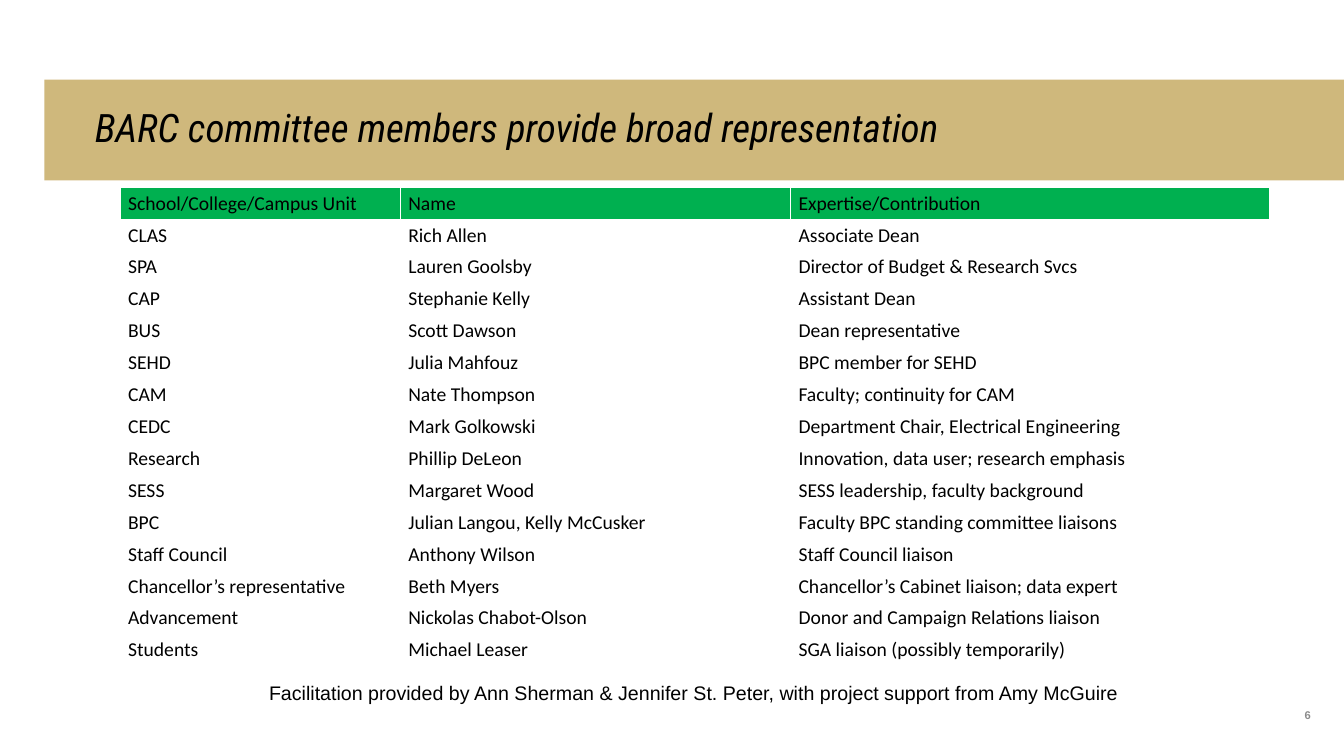
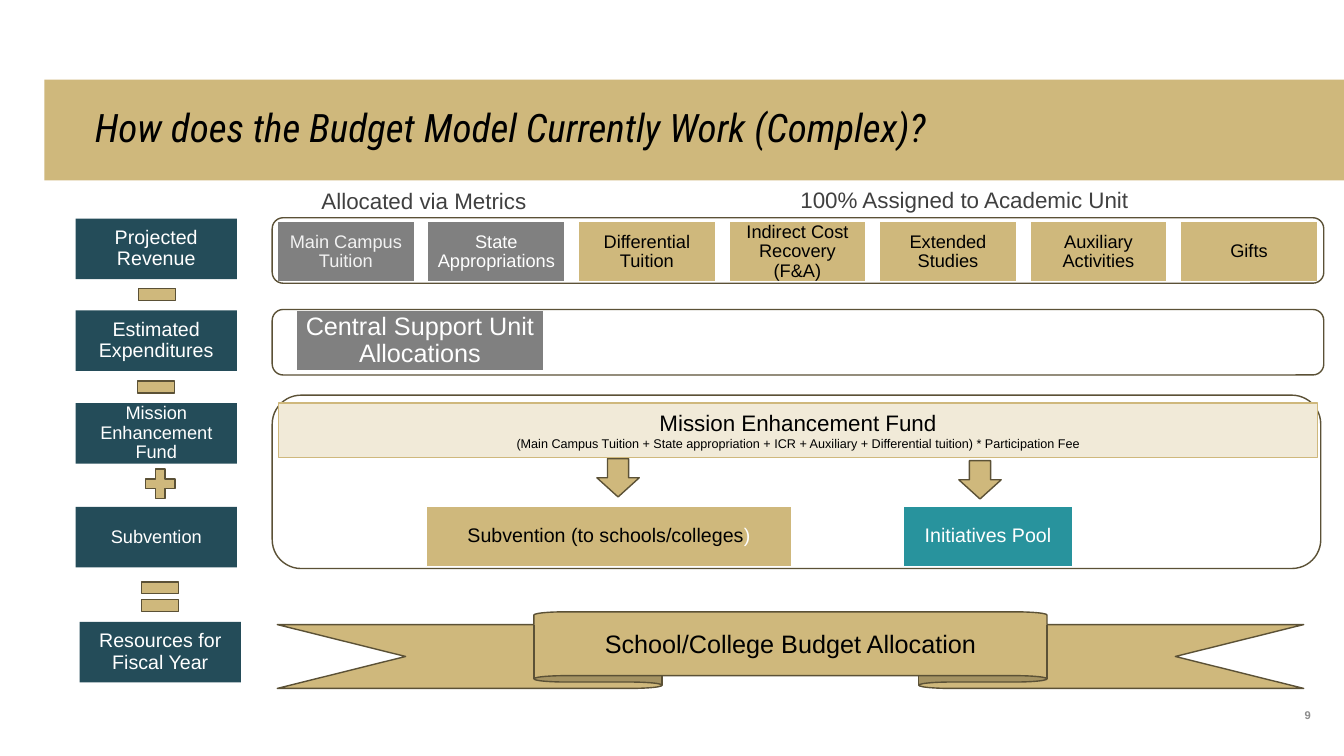
import pptx
import pptx.util
import pptx.dml.color
import pptx.enum.shapes
import pptx.enum.text
import lxml.etree
from pptx.util import Inches, Pt

SHAPE = pptx.enum.shapes.MSO_SHAPE
ALIGN = pptx.enum.text.PP_ALIGN
ANCHOR = pptx.enum.text.MSO_ANCHOR

# Shared colours and fonts
GOLD, CREAM, BROWN = "CFB87C", "F1EAD8", "5B5136"
GRAY, NAVY, TEAL, GREEN = "808080", "244C59", "28939D", "00B050"
BLACK, WHITE, OFF_WHITE, DARK, PAGE = "000000", "FFFFFF", "F2F2F2", "404040", "8C8C8C"
TITLE_FONT, BODY_FONT, TABLE_FONT = "Roboto Condensed", "Arial", "Calibri"

# Committee slide content
MEMBERS = [
    ("School/College/Campus Unit", "Name", "Expertise/Contribution"),
    ("CLAS", "Rich Allen", "Associate Dean"),
    ("SPA", "Lauren Goolsby", "Director of Budget & Research Svcs"),
    ("CAP", "Stephanie Kelly", "Assistant Dean"),
    ("BUS", "Scott Dawson", "Dean representative"),
    ("SEHD", "Julia Mahfouz", "BPC member for SEHD"),
    ("CAM", "Nate Thompson", "Faculty; continuity for CAM"),
    ("CEDC", "Mark Golkowski", "Department Chair, Electrical Engineering"),
    ("Research", "Phillip DeLeon", "Innovation, data user; research emphasis"),
    ("SESS", "Margaret Wood", "SESS leadership, faculty background"),
    ("BPC", "Julian Langou, Kelly McCusker", "Faculty BPC standing committee liaisons"),
    ("Staff Council", "Anthony Wilson", "Staff Council liaison"),
    ("Chancellor’s representative", "Beth Myers", "Chancellor’s Cabinet liaison; data expert"),
    ("Advancement", "Nickolas Chabot-Olson", "Donor and Campaign Relations liaison"),
    ("Students", "Michael Leaser", "SGA liaison (possibly temporarily)"),
]
COLUMN_WIDTHS = (2.78, 3.87, 4.75)
TABLE_HEIGHT = 4.75
FACILITATION = ("Facilitation provided by Ann Sherman & Jennifer St. Peter, "
                "with project support from Amy McGuire")

# Budget model slide content
HEADINGS = [("Allocated via Metrics", 3.09, 1.81, 2.25),
            ("100% Assigned to Academic Unit", 7.84, 1.8, 3.5)]
STEPS = [  # text, left, top, size
    ("Projected Revenue", 0.75, 2.17, 14),
    ("Estimated Expenditures", 0.75, 3.08, 14),
    ("Mission Enhancement Fund", 0.75, 4, 13),
    ("Subvention", 0.75, 5.03, 13),
    ("Resources for Fiscal Year", 0.79, 6.17, 14),
]
OPERATORS = [  # shape, left, top, side
    (SHAPE.MATH_MINUS, 1.31, 2.67, 0.5),
    (SHAPE.MATH_MINUS, 1.3, 3.59, 0.5),
    (SHAPE.MATH_PLUS, 1.39, 4.6, 0.4),
    (SHAPE.MATH_EQUAL, 1.34, 5.67, 0.5),
]
REVENUES = [  # text, fill, text colour
    ("Main Campus Tuition", GRAY, OFF_WHITE),
    ("State Appropriations", GRAY, WHITE),
    ("Differential Tuition", GOLD, BLACK),
    ("Indirect Cost Recovery (F&A)", GOLD, BLACK),
    ("Extended Studies", GOLD, BLACK),
    ("Auxiliary Activities", GOLD, BLACK),
    ("Gifts", GOLD, BLACK),
]
REVENUE_LEFT, REVENUE_STEP, REVENUE_WIDTH = 2.75, 1.493, 1.36
BOX_HEIGHT = 0.6
FRAMES = [(2.7, 2.16, 10.43, 0.65), (2.7, 3.07, 10.43, 0.65), (2.7, 3.92, 10.4, 1.72)]
FUND_LINES = [
    ("Mission Enhancement Fund", 16),
    ("(Main Campus Tuition + State appropriation + ICR + Auxiliary + "
     "Differential tuition) * Participation Fee", 9),
]
DOWN_ARROWS = [(5.92, 4.55), (9.51, 4.57)]


def rgb(value):
    return pptx.dml.color.RGBColor.from_string(value)


def set_font(p, size, color, name=BODY_FONT, bold=False, italic=False):
    font = p.font
    font.size, font.name, font.bold, font.italic = Pt(size), name, bold, italic
    font.color.rgb = rgb(color)


def set_margins(target, left, top, right, bottom):
    target.margin_left, target.margin_top = Inches(left), Inches(top)
    target.margin_right, target.margin_bottom = Inches(right), Inches(bottom)


def add_text(s, text, at, size, color, bold=False, align=ALIGN.LEFT, wrap=True):
    tf = s.shapes.add_textbox(*map(Inches, at)).text_frame
    tf.word_wrap = wrap
    p = tf.paragraphs[0]
    p.text, p.alignment = text, align
    set_font(p, size, color, bold=bold)
    return tf


def add_box(s, shape, at, fill=None, line=None):
    sp = s.shapes.add_shape(shape, *map(Inches, at))
    sp.shadow.inherit = False
    if fill:
        sp.fill.solid()
        sp.fill.fore_color.rgb = rgb(fill)
    else:
        sp.fill.background()
    if line:
        sp.line.color.rgb = rgb(line)
        sp.line.width = Pt(1)
    else:
        sp.line.fill.background()
    return sp


def write_lines(sp, lines, color, margin=None, spacing=None):
    """Centre (text, size) lines in a shape."""
    tf = sp.text_frame
    tf.word_wrap = True
    tf.vertical_anchor = ANCHOR.MIDDLE
    if margin is not None:
        set_margins(tf, *[margin] * 4)
    for i, (text, size) in enumerate(lines):
        p = tf.add_paragraph() if i else tf.paragraphs[0]
        p.text, p.alignment = text, ALIGN.CENTER
        if spacing:
            p.line_spacing = spacing
        set_font(p, size, color)
    return tf


def add_label(s, text, at, size, fill, color, line=WHITE, margin=0.07):
    sp = add_box(s, SHAPE.RECTANGLE, at, fill, line)
    return write_lines(sp, [(text, size)], color, margin, 0.9)


def add_slide(prs, title, number):
    """Title-only slide with the gold title band and page number."""
    s = prs.slides.add_slide(prs.slide_layouts[5])
    sp = s.shapes.title
    sp.left, sp.top, sp.width, sp.height = map(Inches, (0.44, 0.79, 12.89, 1))
    sp.fill.solid()
    sp.fill.fore_color.rgb = rgb(GOLD)
    tf = sp.text_frame
    tf.text = title
    tf.auto_size = pptx.enum.text.MSO_AUTO_SIZE.NONE
    tf.vertical_anchor = ANCHOR.MIDDLE
    set_margins(tf, 0.5, 0.05, 1, 0.05)
    p = tf.paragraphs[0]
    p.alignment, p.line_spacing = ALIGN.LEFT, 0.9
    set_font(p, 28, BLACK, TITLE_FONT, italic=True)
    tf = add_text(s, number, (12.15, 6.66, 0.85, 0.5), 8, PAGE, True, ALIGN.RIGHT)
    tf.vertical_anchor = ANCHOR.BOTTOM
    set_margins(tf, 0, 0, 0, 0)
    return s


def set_borders(cell, color, width):
    ns = "http://schemas.openxmlformats.org/drawingml/2006/main"
    tc_pr = cell._tc.get_or_add_tcPr()
    for i, side in enumerate(("lnL", "lnR", "lnT", "lnB")):
        ln = lxml.etree.Element(f"{{{ns}}}{side}", w=str(Pt(width)))
        fill = lxml.etree.SubElement(ln, f"{{{ns}}}solidFill")
        lxml.etree.SubElement(fill, f"{{{ns}}}srgbClr", val=color)
        tc_pr.insert(i, ln)


def build_committee(prs):
    s = add_slide(prs, "BARC committee members provide broad representation", "6")
    add_text(s, FACILITATION, (2.57, 6.71, 8.64, 0.34), 14, BLACK, wrap=False)

    # Members table
    at = (1.19, 1.86, sum(COLUMN_WIDTHS), TABLE_HEIGHT)
    table = s.shapes.add_table(len(MEMBERS), len(COLUMN_WIDTHS), *map(Inches, at)).table
    table.horz_banding = False
    for column, width in zip(table.columns, COLUMN_WIDTHS):
        column.width = Inches(width)
    for r, row in enumerate(MEMBERS):
        for c, text in enumerate(row):
            cell = table.cell(r, c)
            cell.text = text
            set_margins(cell, 0.08, 0.04, 0.08, 0.04)
            if r == 0:
                cell.fill.solid()
                cell.fill.fore_color.rgb = rgb(GREEN)
            else:
                cell.fill.background()
            set_borders(cell, WHITE, 0.75)
            set_font(cell.text_frame.paragraphs[0], 14, BLACK, TABLE_FONT)


def build_budget_model(prs):
    s = add_slide(prs, "How does the Budget Model Currently Work (Complex)?", "9")
    for text, left, top, width in HEADINGS:
        add_text(s, text, (left, top, width, 0.37), 16, DARK)

    # Left column of steps and operators
    for text, left, top, size in STEPS:
        add_label(s, text, (left, top, 1.6, BOX_HEIGHT), size, NAVY, WHITE, line=None)
    for shape, left, top, side in OPERATORS:
        add_box(s, shape, (left, top, side, side), GOLD, BROWN)

    # Revenue and expenditure boxes
    for i, (text, fill, color) in enumerate(REVENUES):
        at = (REVENUE_LEFT + i * REVENUE_STEP, 2.2, REVENUE_WIDTH, BOX_HEIGHT)
        add_label(s, text, at, 13, fill, color, margin=0.05)
    add_label(s, "Central Support Unit Allocations", (2.94, 3.08, 2.45, BOX_HEIGHT),
              18, GRAY, WHITE)

    # Fund uses
    tf = add_label(s, "Subvention (to schools/colleges", (4.23, 5.02, 3.62, BOX_HEIGHT),
                   14, GOLD, BLACK, margin=0.06)
    r = tf.paragraphs[0].add_run()
    r.text = ")"
    r.font.color.rgb = rgb(WHITE)
    add_label(s, "Initiatives Pool", (8.96, 5.02, 1.68, BOX_HEIGHT), 14, TEAL, WHITE,
              margin=0.06)
    for left, top in DOWN_ARROWS:
        add_box(s, SHAPE.DOWN_ARROW, (left, top, 0.42, 0.38), GOLD, BROWN)

    # Row frames, fund bar and result ribbon
    for at in FRAMES:
        add_box(s, SHAPE.ROUNDED_RECTANGLE, at, line=BROWN)
    bar = add_box(s, SHAPE.RECTANGLE, (2.76, 4, 10.31, 0.54), CREAM, GOLD)
    write_lines(bar, FUND_LINES, BLACK)
    ribbon = add_box(s, SHAPE.UP_RIBBON, (2.75, 6.07, 10.18, 0.76), GOLD, BROWN)
    write_lines(ribbon, [("School/College Budget Allocation", 18)], BLACK)


def main():
    prs = pptx.Presentation()
    prs.slide_width, prs.slide_height = Inches(13.33), Inches(7.5)
    build_committee(prs)
    build_budget_model(prs)
    prs.save("out.pptx")


if __name__ == "__main__":
    main()
